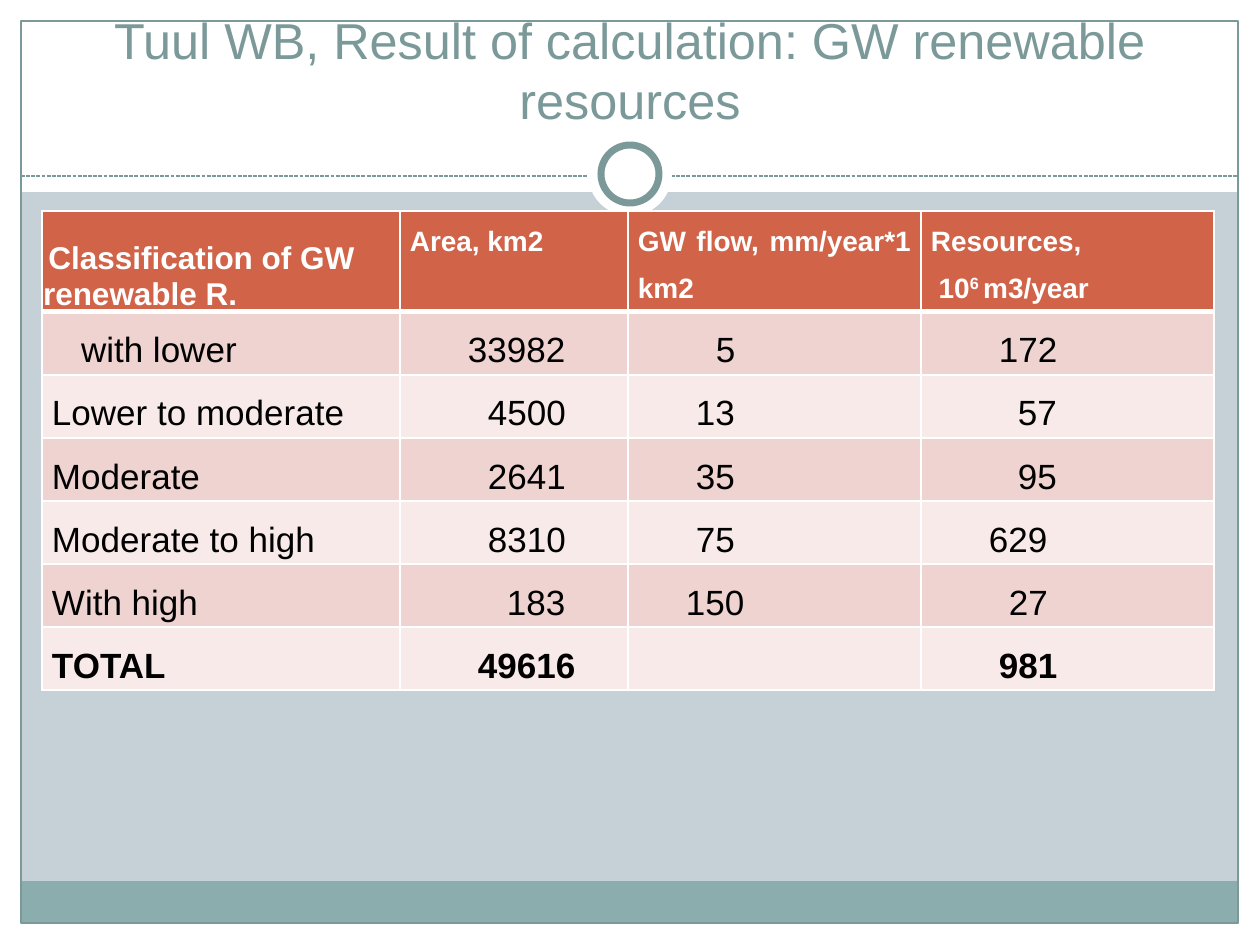
from pptx import Presentation
from pptx.dml.color import RGBColor
from pptx.enum.dml import MSO_LINE
from pptx.enum.shapes import MSO_CONNECTOR, MSO_SHAPE
from pptx.enum.text import MSO_ANCHOR, PP_ALIGN
from pptx.util import Emu, Pt
from lxml.etree import SubElement
from pptx.oxml import parse_xml
from pptx.oxml.ns import nsdecls, qn

COLORS = {
    "background": "C5D1D7", "white": "FFFFFF", "black": "000000",
    "footer": "8CADAE", "accent": "7C999A", "header": "D16349",
    "odd": "EED3D0", "even": "F7EAE9",
}
HEADERS = [
    [[(" ", 11), ("Classification of GW renewable R.", 18)]],
    [[("Area, km2", 16)]],
    [[("GW flow, mm/year*1 km2", 16)]],
    [[("Resources,", 16)], [(" 10", 16), ("6 ", 16, True), ("m3/year", 16)]],
]
ROWS = [
    [("with lower", 3), ("33982", 6), ("5", 8), ("172", 7)],
    [("Lower to moderate", 0), ("4500", 8), ("13", 6), ("57", 9)],
    [("Moderate", 0), ("2641", 8), ("35", 6), ("95", 9)],
    [("Moderate to high", 0), ("8310", 8), ("75", 6), ("629", 6)],
    [("With high", 0), ("183", 10), ("150", 5), ("27", 8)],
    [("TOTAL", 0), ("49616", 7), ("", 0), ("981", 7)],
]


def px(n):
    return Emu(round(n * 914400 / 126))


def rgb(name):
    return RGBColor.from_string(COLORS[name])


class Deck:
    """Holds the style and the current slide and draws each kind of element."""

    font = "Arial"

    def __init__(self, width, height):
        self.prs = Presentation()
        self.prs.slide_width, self.prs.slide_height = px(width), px(height)
        self.s = self.prs.slides.add_slide(self.prs.slide_layouts[6])
        fill = self.s.background.fill
        fill.solid()
        fill.fore_color.rgb = rgb("background")

    def shape(self, kind, x, y, w, h, fill=None, line=None, weight=0.75):
        sp = self.s.shapes.add_shape(kind, px(x), px(y), px(w), px(h))
        sp.shadow.inherit = False
        if fill:
            sp.fill.solid()
            sp.fill.fore_color.rgb = rgb(fill)
        else:
            sp.fill.background()
        if line:
            sp.line.color.rgb = rgb(line)
            sp.line.width = Pt(weight)
        else:
            sp.line.fill.background()

    def dashed_line(self, x1, x2, y, color):
        c = self.s.shapes.add_connector(MSO_CONNECTOR.STRAIGHT, px(x1), px(y), px(x2), px(y))
        c.line.color.rgb = rgb(color)
        c.line.width = Pt(0.75)
        c.line.dash_style = MSO_LINE.SQUARE_DOT
        SubElement(c._element.spPr, qn("a:effectLst"))

    def style(self, r, size, color, bold=False):
        r.font.name = self.font
        r.font.size = Pt(size)
        r.font.bold = bold
        r.font.color.rgb = rgb(color)

    def title(self, text, x, y, w, h):
        tf = self.s.shapes.add_textbox(px(x), px(y), px(w), px(h)).text_frame
        tf.word_wrap = True
        tf.vertical_anchor = MSO_ANCHOR.BOTTOM
        tf.text = text
        p = tf.paragraphs[0]
        p.alignment = PP_ALIGN.CENTER
        self.style(p.runs[0], 28.8, "accent")

    def borders(self, cell, top, bottom):
        tcPr = cell._tc.get_or_add_tcPr()
        for i, (side, weight) in enumerate(zip("LRTB", (1, 1, top, bottom))):
            tcPr.insert(i, parse_xml(
                f'<a:ln{side} {nsdecls("a")} w="{Pt(weight)}"><a:solidFill>'
                f'<a:srgbClr val="{COLORS["white"]}"/></a:solidFill></a:ln{side}>'))

    def cell(self, cell, fill, indent=0, top=1, bottom=1):
        cell.fill.solid()
        cell.fill.fore_color.rgb = rgb(fill)
        cell.margin_left, cell.margin_right = px(10 + indent), px(10)
        cell.margin_top = cell.margin_bottom = 0
        self.borders(cell, top, bottom)

    def header_cell(self, cell, paragraphs):
        self.cell(cell, "header", bottom=3)
        tf = cell.text_frame
        for i, runs in enumerate(paragraphs):
            p = tf.add_paragraph() if i else tf.paragraphs[0]
            p.alignment = PP_ALIGN.JUSTIFY
            p.line_spacing = 1.5
            for text, size, *raised in runs:
                r = p.add_run()
                r.text = text
                self.style(r, size, "white", True)
                if raised:
                    r._r.get_or_add_rPr().set("baseline", "30000")

    def body_cell(self, cell, text, steps, row):
        self.cell(cell, "odd" if row % 2 else "even", round(9.7 * steps), 3 if row == 1 else 1)
        p = cell.text_frame.paragraphs[0]
        p.line_spacing = 1.5
        if text:
            p.text = text
            self.style(p.runs[0], 20, "black", row == len(ROWS))

    def table(self, x, y, widths, header_height, row_height):
        height = header_height + row_height * len(ROWS)
        t = self.s.shapes.add_table(len(ROWS) + 1, len(widths), px(x), px(y),
                                    px(sum(widths)), px(height)).table
        for column, width in zip(t.columns, widths):
            column.width = px(width)
        for i, row in enumerate(t.rows):
            row.height = px(row_height if i else header_height)
        for j, paragraphs in enumerate(HEADERS):
            self.header_cell(t.cell(0, j), paragraphs)
        first = t.cell(0, 0)
        first.vertical_anchor = MSO_ANCHOR.BOTTOM
        first.margin_left = first.margin_right = first.margin_top = px(1)
        first.text_frame.paragraphs[0].alignment = PP_ALIGN.LEFT
        first.text_frame.paragraphs[0].line_spacing = 1.0
        for i, values in enumerate(ROWS, 1):
            for j, (text, steps) in enumerate(values):
                self.body_cell(t.cell(i, j), text, steps, i)


def main():
    deck = Deck(1260, 945)
    rect, oval = MSO_SHAPE.RECTANGLE, MSO_SHAPE.OVAL
    for band in ((0, 924, 1260, 21), (0, 0, 1260, 192), (0, 0, 21, 945), (1239, 0, 21, 945)):
        deck.shape(rect, *band, fill="white")
    deck.shape(rect, 21, 881, 1217, 43, fill="footer")
    deck.shape(rect, 21, 21, 1217, 902, line="accent")
    deck.dashed_line(21, 1239, 176, "accent")
    deck.shape(oval, 588, 132, 84, 84, fill="white")
    deck.shape(oval, 601, 145, 58, 58, fill="white", line="accent", weight=4)
    deck.title("Tuul WB, Result of calculation: GW renewable resources", 42, 32, 1176, 104)
    deck.table(42, 211, (358, 228, 293, 293), 92, 58)
    deck.prs.save("out.pptx")


if __name__ == "__main__":
    main()
